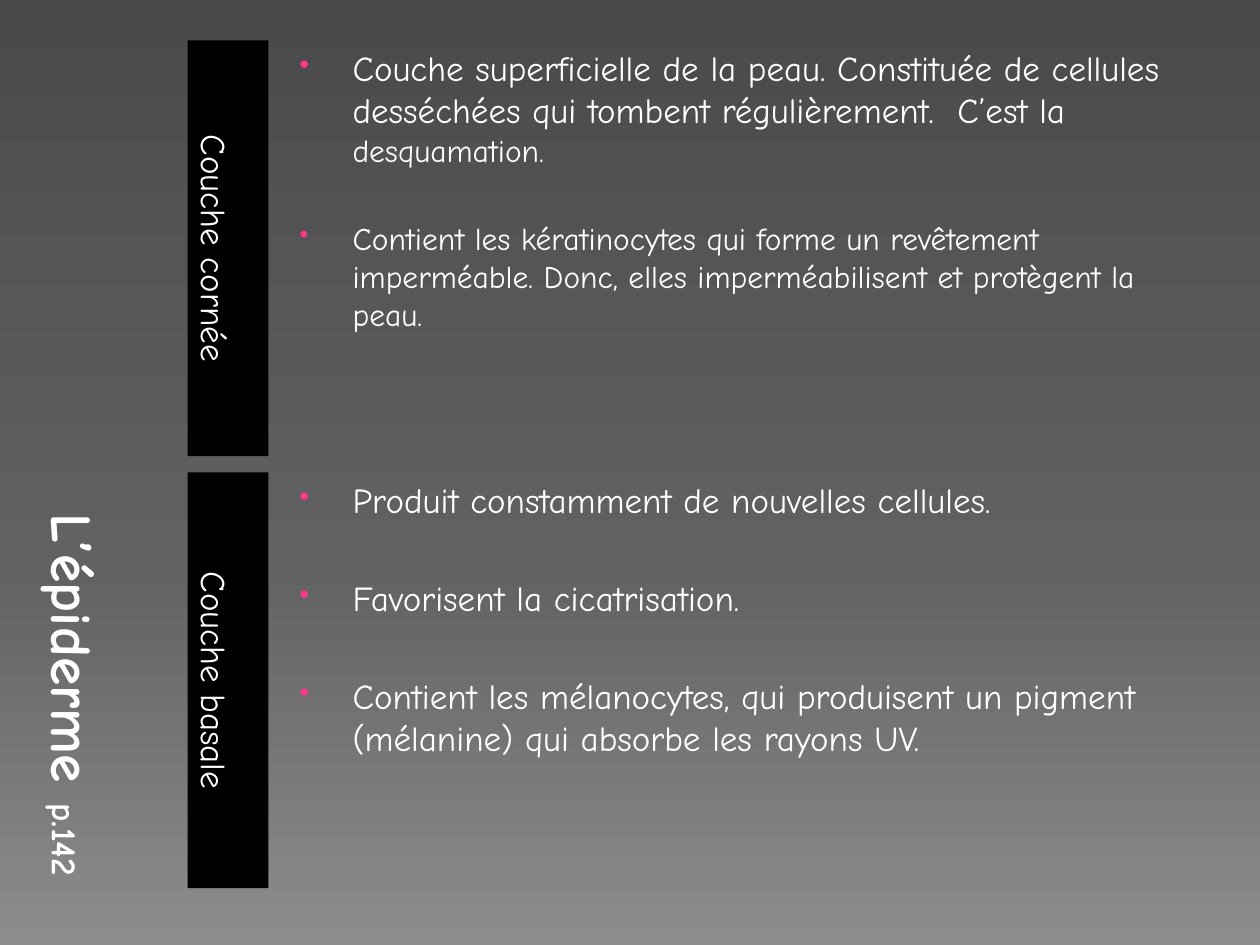
"""Builds the slide on the two layers of the epidermis."""
from copy import deepcopy

from pptx import Presentation
from pptx.dml.color import RGBColor
from pptx.enum.shapes import MSO_SHAPE as Shape
from pptx.enum.text import MSO_ANCHOR as Anchor, PP_ALIGN as Align
from pptx.oxml.ns import qn
from pptx.oxml.xmlchemy import OxmlElement as Element
from pptx.util import Inches, Pt

WHITE = RGBColor(0xFF, 0xFF, 0xFF)
BLACK = RGBColor(0, 0, 0)
PINK = RGBColor(0xFF, 0x38, 0x8C)
BACKDROP = (
    (0, RGBColor(0x4A, 0x4A, 0x4A)),
    (0.6, RGBColor(0x62, 0x62, 0x62)),
    (1, RGBColor(0x8C, 0x8C, 0x8C)),
)
FONT = "Comic Neue"
TITLE = (("L’épiderme ", 33), ("p.142", 20))
LAYERS = (
    ("Couche cornée", 29, (
        (("Couche superficielle de la peau. Constituée de cellules desséchées "
          "qui tombent régulièrement.  C’est la ", 20), ("desquamation.", 18)),
        (("Contient les kératinocytes qui forme un revêtement imperméable. "
          "Donc, elles imperméabilisent et protègent la peau.", 18),),
    )),
    ("Couche basale", 32, (
        (("Produit constamment de nouvelles cellules.", 20),),
        (("Favorisent la cicatrisation.", 20),),
        (("Contient les mélanocytes, qui produisent un pigment (mélanine) "
          "qui absorbe les rayons UV.", 20),),
    )),
)
COLUMNS = {"title": (0.27, 1.17), "label": (1.49, 0.64), "points": (2.21, 7.5)}
TOP, ROW_HEIGHT, ROW_GAP = 0.32, 3.3, 0.13


def write(paragraph, runs, bold=False, align=Align.LEFT, before=0):
    """Fill a paragraph with (text, size) runs."""
    paragraph.alignment = align
    paragraph.space_before = Pt(before)
    for text, size in runs:
        run = paragraph.add_run()
        run.text = text
        run.font.name = FONT
        run.font.size = Pt(size)
        run.font.bold = bold
        run.font.color.rgb = WHITE


def add_bullet(paragraph):
    """Give a paragraph a hanging pink bullet."""
    properties = paragraph._p.get_or_add_pPr()
    properties.set("marL", str(Inches(0.49)))
    properties.set("indent", str(Inches(-0.42)))
    colour = Element("a:buClr")
    value = Element("a:srgbClr")
    value.set("val", str(PINK))
    colour.append(value)
    size = Element("a:buSzPct")
    size.set("val", "80000")
    mark = Element("a:buChar")
    mark.set("char", "•")
    properties.extend((colour, size, mark))


class LayerSlide:
    """Holds the current slide and draws its parts on a grid."""

    def __init__(self, deck):
        """Add a title-only slide to the deck."""
        self.slide = deck.slides.add_slide(deck.slide_layouts[5])

    def cell(self, column, row=0, span=1):
        """Return left, top, width and height of a grid cell."""
        left, width = COLUMNS[column]
        top = TOP + row * (ROW_HEIGHT + ROW_GAP)
        height = span * ROW_HEIGHT + (span - 1) * ROW_GAP
        return [Inches(length) for length in (left, top, width, height)]

    def backdrop(self, stops):
        """Paint a vertical gradient behind the slide."""
        fill = self.slide.background.fill
        fill.gradient()
        fill.gradient_angle = 270
        stop_list = self.slide.element.find(".//" + qn("a:gsLst"))
        stop_list.append(deepcopy(stop_list[-1]))
        for stop, (position, colour) in zip(fill.gradient_stops, stops):
            stop.position = position
            stop.color.rgb = colour

    def title(self, runs):
        """Turn the title a quarter clockwise within the cell of both rows."""
        heading = self.slide.shapes.title
        left, top, width, height = self.cell("title", span=2)
        shift = (height - width) // 2
        heading.left, heading.top = left - shift, top + shift
        heading.width, heading.height = height, width
        heading.rotation = 90
        frame = heading.text_frame
        frame.word_wrap = True
        frame.vertical_anchor = Anchor.BOTTOM
        write(frame.paragraphs[0], runs, bold=True, align=Align.RIGHT)

    def label(self, row, name):
        """Draw the black bar that names a layer from top to bottom."""
        bar = self.slide.shapes.add_shape(Shape.RECTANGLE, *self.cell("label", row))
        bar.shadow.inherit = False
        bar.fill.solid()
        bar.fill.fore_color.rgb = BLACK
        bar.line.fill.background()
        frame = bar.text_frame
        frame.word_wrap = True
        frame.vertical_anchor = Anchor.BOTTOM
        frame._txBody.bodyPr.set("vert", "vert")
        write(frame.paragraphs[0], ((name, 20),), align=Align.CENTER)

    def points(self, row, facts, gap):
        """Write the bulleted facts of a layer."""
        frame = self.slide.shapes.add_textbox(*self.cell("points", row)).text_frame
        frame.word_wrap = True
        for index, runs in enumerate(facts):
            paragraph = frame.add_paragraph() if index else frame.paragraphs[0]
            write(paragraph, runs, before=gap if index else 4)
            add_bullet(paragraph)


def main():
    """Build and save the deck."""
    deck = Presentation()
    deck.slide_width, deck.slide_height = Inches(10), Inches(7.5)
    page = LayerSlide(deck)
    page.backdrop(BACKDROP)
    page.title(TITLE)
    for row, (name, gap, facts) in enumerate(LAYERS):
        page.label(row, name)
        page.points(row, facts, gap)
    deck.save("out.pptx")


if __name__ == "__main__":
    main()
